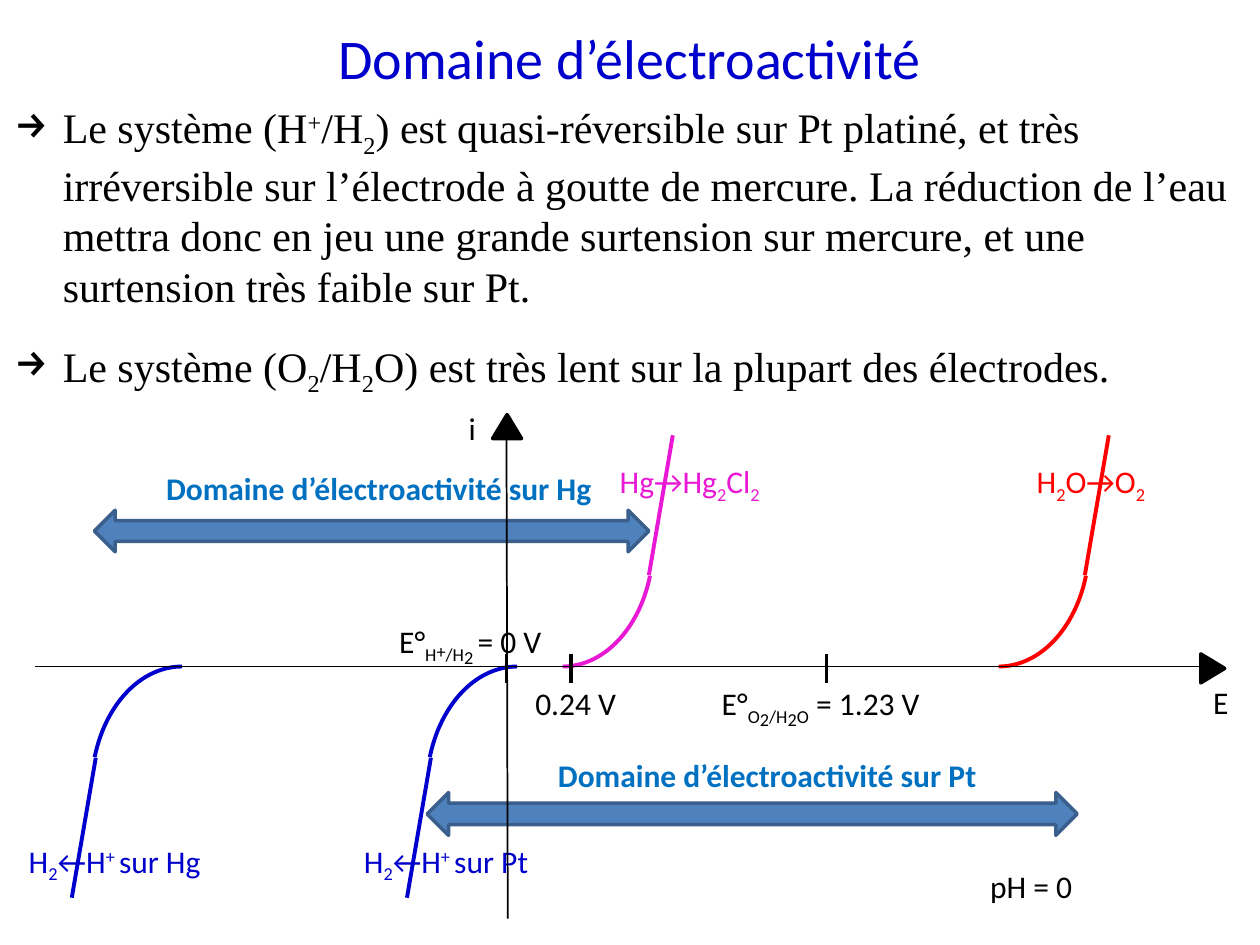
from dataclasses import dataclass

import pptx
import pptx.dml.color
import pptx.enum.shapes
import pptx.enum.text
import pptx.oxml
import pptx.oxml.ns
import pptx.util

Pt = pptx.util.Pt
Kind = pptx.enum.shapes.MSO_SHAPE
Align = pptx.enum.text.PP_ALIGN


@dataclass(frozen=True)
class Theme:
    blue: str = "0000CC"
    red: str = "FF0000"
    pink: str = "E818D4"
    sky: str = "0070C0"
    black: str = "000000"
    fill: str = "4F81BD"
    edge: str = "3A5F8C"
    sans: str = "Calibri"
    serif: str = "Times New Roman"
    title: int = 32
    body: int = 24
    label: int = 18
    curve: float = 2.25
    bold: float = 2
    thin: float = 1


@dataclass(frozen=True)
class Box:
    """A place on a grid of 100 columns and 75 rows."""
    x: float
    y: float
    w: float
    h: float


@dataclass(frozen=True)
class Curve:
    x: float       # centre column of the arc
    up: bool       # oxidation rises, reduction falls
    color: str
    at: tuple      # left and top of the label
    text: tuple


@dataclass(frozen=True)
class Range:
    box: Box
    at: tuple
    metal: str


T = Theme()
SUB, LOW, SUP, MID = -25, -35, 30, -15   # baseline shifts in percent
COLS, ROWS = 100, 75
AXIS_X, AXIS_Y = 40.2, 52.9
ARC_W, ARC_H, ARC_START = 19.7, 14.4, 174.584
TWO = ("2", SUB)

deck = pptx.Presentation()
deck.slide_width = pptx.util.Inches(10)
deck.slide_height = pptx.util.Inches(7.5)
slide = deck.slides.add_slide(deck.slide_layouts[5])


def col(n: float) -> int:
    return round(deck.slide_width * n / COLS)


def row(n: float) -> int:
    return round(deck.slide_height * n / ROWS)


def spot(b: Box) -> tuple:
    return col(b.x), row(b.y), col(b.w), row(b.h)


def rgb(code: str):
    return pptx.dml.color.RGBColor.from_string(code)


def write(para, runs: tuple, *, size=T.label, font=T.sans, color=T.black,
          bold=False, align=Align.LEFT) -> None:
    """Fill a paragraph with strings and (string, baseline) pairs."""
    para.alignment = align
    for part in runs:
        text, base = part if isinstance(part, tuple) else (part, 0)
        run = para.add_run()
        run.text = text
        face = run.font
        face.size, face.name, face.bold = Pt(size), font, bold
        face.color.rgb = rgb(color)
        if base:
            run._r.get_or_add_rPr().set("baseline", str(base * 1000))


def frame(box: Box):
    text = slide.shapes.add_textbox(*spot(box)).text_frame
    text.word_wrap = True
    return text


def label(at: tuple, runs: tuple, width: float = 20, **style) -> None:
    write(frame(Box(*at, width, 4)).paragraphs[0], runs, **style)


def line(x1: float, y1: float, x2: float, y2: float,
         color: str = T.black, width: float = T.thin) -> None:
    link = slide.shapes.add_connector(
        pptx.enum.shapes.MSO_CONNECTOR.STRAIGHT, col(x1), row(y1), col(x2), row(y2))
    link.line.color.rgb = rgb(color)
    link.line.width = Pt(width)
    link._element.spPr.append(pptx.oxml.parse_xml(
        "<a:effectLst %s/>" % pptx.oxml.ns.nsdecls("a")))


def shape(kind, box: Box, edge: str, fill: str = "", width: float = T.bold,
          turn: float = 0):
    item = slide.shapes.add_shape(kind, *spot(box))
    item.shadow.inherit = False
    item.rotation = turn
    item.line.color.rgb = rgb(edge)
    item.line.width = Pt(width)
    if fill:
        item.fill.solid()
        item.fill.fore_color.rgb = rgb(fill)
    else:
        item.fill.background()
    return item


def bullet(para, sign: str) -> None:
    props = para._p.get_or_add_pPr()
    step = col(3.8)
    props.set("marL", str(step))
    props.set("indent", str(-step))
    props.append(pptx.oxml.parse_xml(
        '<a:buChar %s char="%s"/>' % (pptx.oxml.ns.nsdecls("a"), sign)))


def draw_curve(c: Curve) -> None:
    """Quarter arc off the axis, then a steep straight branch."""
    side = 1 if c.up else -1
    mid = AXIS_Y - side * ARC_W / 2
    arc = shape(Kind.ARC, Box(c.x - ARC_W / 2, mid - ARC_H / 2, ARC_W, ARC_H),
                c.color, width=T.curve, turn=90 if c.up else 270)
    arc.adjustments[0] = ARC_START
    arc.adjustments[1] = 0
    line(c.x + side * 8.75, mid - side * 8.5,
         c.x + side * 6.85, mid + side * 2.6, c.color, T.curve)
    label(c.at, c.text, color=c.color)


def draw_range(r: Range) -> None:
    shape(Kind.LEFT_RIGHT_ARROW, r.box, T.edge, T.fill)
    label(r.at, ("Domaine d’électroactivité sur " + r.metal,), 38,
          color=T.sky, bold=True)


def draw_axes() -> None:
    line(2.8, AXIS_Y, 95.7, AXIS_Y)
    line(AXIS_X, 34.6, AXIS_X + 0.1, 72.9)
    shape(Kind.ISOSCELES_TRIANGLE, Box(39.1, 32.9, 2.3, 1.9), T.black, T.black)
    shape(Kind.ISOSCELES_TRIANGLE, Box(95.1, 52.1, 2.3, 1.9), T.black, T.black, turn=90)
    for x in (AXIS_X, 45.3, 65.6):
        line(x, AXIS_Y - 1, x, AXIS_Y + 1.3, width=T.bold)


CURVES = (
    Curve(79.25, True, T.red, (81.3, 36.2), ("H", TWO, "O→O", TWO)),
    Curve(41.05, False, T.blue, (27.9, 66.3), ("H", TWO, "←H", ("+ ", SUP), "sur Pt")),
    Curve(14.45, False, T.blue, (1.3, 66.3), ("H", TWO, "←H", ("+ ", SUP), "sur Hg")),
    Curve(44.65, True, T.pink, (48.2, 36.2), ("Hg→Hg", TWO, "Cl", TWO)),
)
RANGES = (
    Range(Box(33.9, 62.9, 51.6, 3.4), (43.3, 59.5), "Pt"),
    Range(Box(7.5, 40.5, 44, 3.3), (12.2, 36.7), "Hg"),
)
LABELS = (
    ((41.5, 53.8), ("0.24 V",)),
    ((56.3, 53.8), ("E°", ("O", SUB), ("2", LOW), ("/H", SUB), ("2", LOW),
                    ("O", SUB), " = 1.23 V")),
    ((30.7, 48.9), ("E°", ("H", SUB), ("+", MID), ("/H", SUB), ("2 ", LOW), "= 0 V")),
    ((95.3, 53.7), ("E",), 4.7),
    ((36.2, 32), ("i",), 3.9),
    ((77.6, 68.3), ("pH = 0",)),
)
POINTS = (
    ("Le système (H", ("+", SUP), "/H", TWO,
     ") est quasi-réversible sur Pt platiné, et très irréversible sur l’électrode "
     "à goutte de mercure. La réduction de l’eau mettra donc en jeu une grande "
     "surtension sur mercure, et une surtension très faible sur Pt."),
    ("Le système (O", TWO, "/H", TWO, "O) est très lent sur la plupart des électrodes."),
)

head = slide.shapes.title
head.left, head.top, head.width, head.height = spot(Box(0, 1.3, 100, 6.4))
write(head.text_frame.paragraphs[0], ("Domaine d’électroactivité",),
      size=T.title, color=T.blue, align=Align.CENTER)

body = frame(Box(0.2, 7.6, 100, 30))
for i, runs in enumerate(POINTS):
    para = body.add_paragraph() if i else body.paragraphs[0]
    para.space_before = Pt(17 * i)
    bullet(para, "→")
    write(para, runs, size=T.body, font=T.serif)

for curve in CURVES:
    draw_curve(curve)
for span in RANGES:
    draw_range(span)
draw_axes()
for item in LABELS:
    label(*item)

deck.save("out.pptx")
